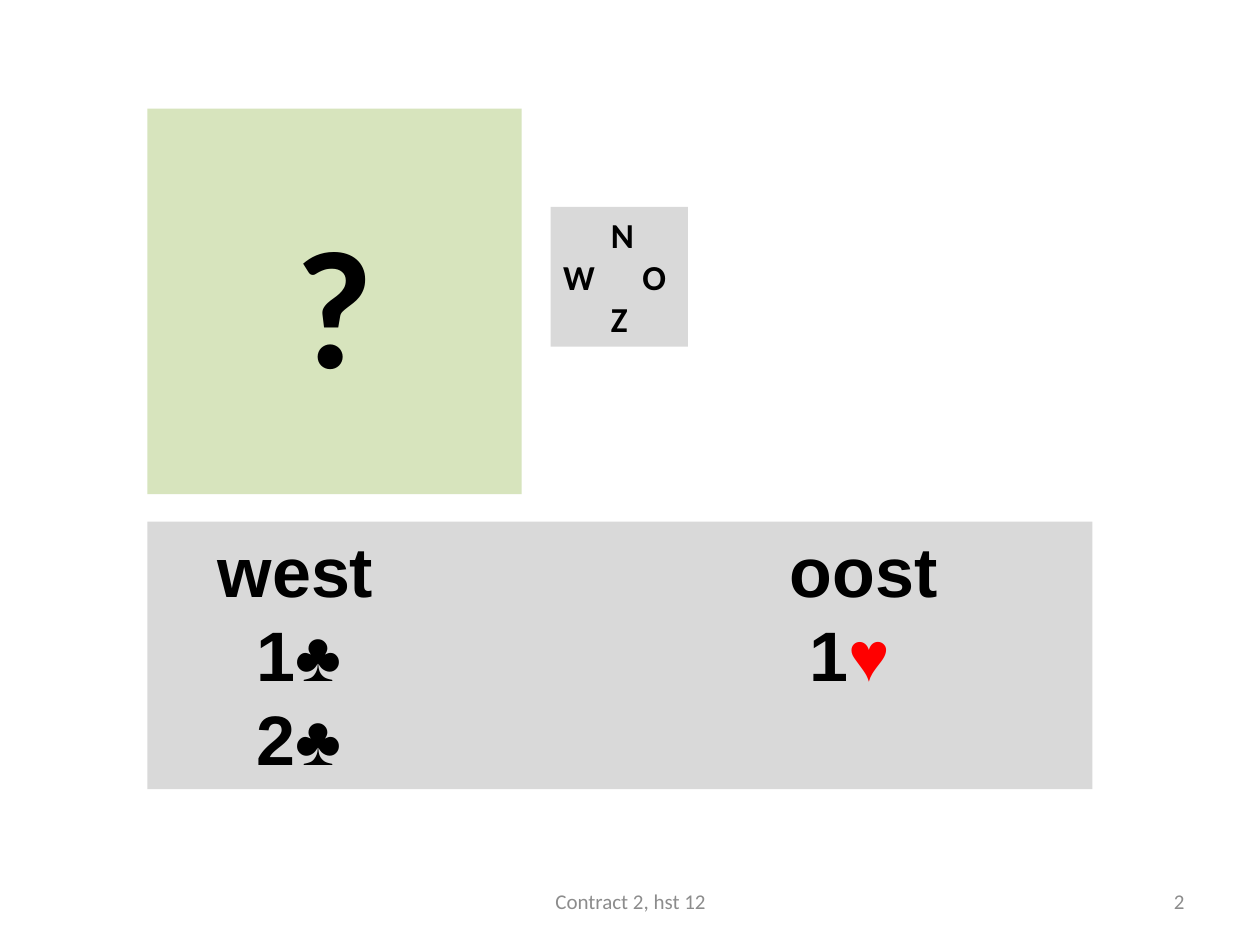
from lxml.etree import SubElement
from pptx import Presentation
from pptx.dml.color import RGBColor
from pptx.enum.shapes import MSO_SHAPE
from pptx.enum.text import MSO_ANCHOR, PP_ALIGN
from pptx.oxml.ns import qn
from pptx.util import Inches, Pt

HUES = {"green": "D7E4BD", "gray": "D9D9D9", "ink": "000000",
        "heart": "FF0000", "foot": "8C8C8C"}
WIDE, HIGH = 10, 7.5


def hue(name):
    return RGBColor.from_string(HUES[name])


def write(para, text, size=20, font="Calibri", color="ink", bold=True):
    """Add one formatted run; a heart sign gets its own red run."""
    head, heart, _ = text.partition("♥")
    for part, tone in ((head, color), (heart, "heart")):
        if part:
            run = para.add_run()
            run.text = part
            run.font.size, run.font.name, run.font.bold = Pt(size), font, bold
            run.font.color.rgb = hue(tone)


def set_tabs(para, stops):
    tabs = SubElement(para._p.get_or_add_pPr(), qn("a:tabLst"))
    for stop in stops:
        SubElement(tabs, qn("a:tab"), pos=str(Inches(stop)), algn="l")


class Page:
    """Current slide; places are shares of its width and height."""

    def __init__(self, deck):
        self.slide = deck.slides.add_slide(deck.slide_layouts[6])

    def place(self, x, y, w, h):
        return (Inches(x * WIDE), Inches(y * HIGH),
                Inches(w * WIDE), Inches(h * HIGH))

    def fill(self, frame, lines, align, anchor, **style):
        frame.word_wrap = True
        frame.vertical_anchor = anchor
        for i, (text, stops) in enumerate(lines):
            para = frame.add_paragraph() if i else frame.paragraphs[0]
            para.alignment = align
            if stops:
                set_tabs(para, stops)
            write(para, text, **style)

    def panel(self, at, color, lines, align=PP_ALIGN.LEFT,
              anchor=MSO_ANCHOR.TOP, **style):
        box = self.slide.shapes.add_shape(MSO_SHAPE.RECTANGLE, *self.place(*at))
        box.shadow.inherit = False
        box.fill.solid()
        box.fill.fore_color.rgb = hue(color)
        box.line.fill.background()
        self.fill(box.text_frame, lines, align, anchor, **style)

    def label(self, at, text, align):
        box = self.slide.shapes.add_textbox(*self.place(*at))
        self.fill(box.text_frame, [(text, ())], align, MSO_ANCHOR.MIDDLE,
                  size=12, color="foot", bold=False)


def main():
    deck = Presentation()
    deck.slide_width, deck.slide_height = Inches(WIDE), Inches(HIGH)
    page = Page(deck)

    # Hidden hand
    page.panel((0.117, 0.115, 0.297, 0.408), "green", [("?", ())],
               align=PP_ALIGN.CENTER, anchor=MSO_ANCHOR.MIDDLE, size=96)

    # Compass
    mid, east = 0.38, 0.63
    page.panel((0.437, 0.219, 0.109, 0.148), "gray",
               [("\tN", [mid]), ("W\tO", [east]), ("\tZ", [mid])])

    # Bidding
    names, bids = (0.46, 5), (0.77, 5.16)
    page.panel((0.117, 0.552, 0.75, 0.283), "gray",
               [("\twest\toost", names), ("\t1♣\t1♥", bids), ("\t2♣", bids)],
               size=40, font="Arial")

    # Footer
    page.label((0.717, 0.927, 0.233, 0.053), "2", PP_ALIGN.RIGHT)
    page.label((0.342, 0.927, 0.317, 0.053), "Contract 2, hst 12",
               PP_ALIGN.CENTER)

    deck.save("out.pptx")


if __name__ == "__main__":
    main()
